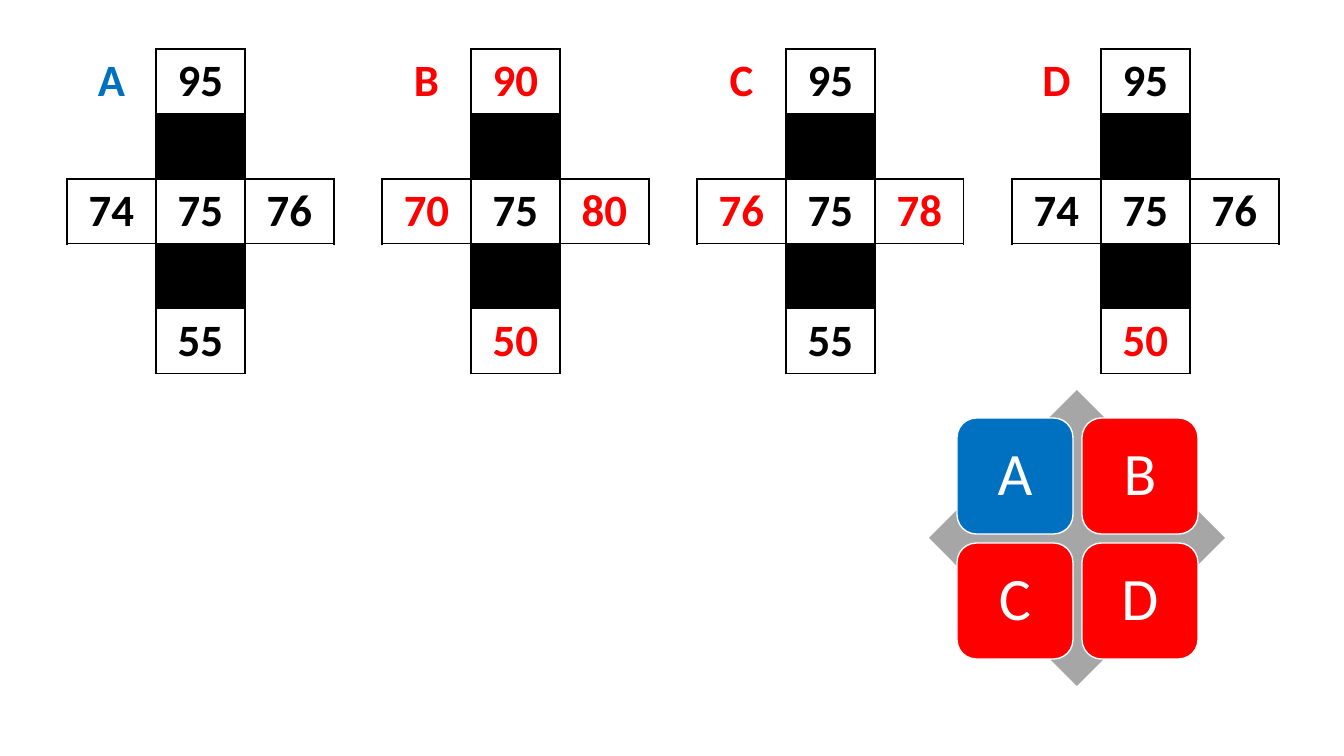
from pptx import Presentation, util as u
from pptx.dml.color import RGBColor
from pptx.enum import shapes, text
from pptx.oxml import parse_xml
from pptx.oxml.ns import nsdecls

BLACK = RGBColor(0x00, 0x00, 0x00)
WHITE = RGBColor(0xFF, 0xFF, 0xFF)
RED = RGBColor(0xFF, 0x00, 0x00)
BLUE = RGBColor(0x00, 0x70, 0xC0)
GRAY = RGBColor(0xA6, 0xA6, 0xA6)


def px(n):
    return u.Emu(round(n * 914400 / 100.8))


def write(tf, words, size, color, bold=False):
    p = tf.paragraphs[0]
    p.alignment = text.PP_ALIGN.CENTER
    r = p.add_run()
    r.text = words
    r.font.name = "Calibri"
    r.font.size = u.Pt(size)
    r.font.bold = bold
    r.font.color.rgb = color
    return p


prs = Presentation()
prs.slide_width, prs.slide_height = px(1344), px(756)
s = prs.slides.add_slide(prs.slide_layouts[6])
label_colors = {"A": BLUE, "B": RED, "C": RED, "D": RED}

# Answer matrix: diamond behind four tiles
group = s.shapes.add_group_shape()
diamond = group.shapes.add_shape(shapes.MSO_SHAPE.DIAMOND, px(929), px(390), px(296), px(296))
diamond.shadow.inherit = False
diamond.fill.solid()
diamond.fill.fore_color.rgb = GRAY
diamond.line.fill.background()

for i, (label, color) in enumerate(label_colors.items()):
    row, col = divmod(i, 2)
    sp = group.shapes.add_shape(shapes.MSO_SHAPE.ROUNDED_RECTANGLE,
                                px(957 + 125 * col), px(418 + 125 * row), px(116), px(116))
    sp.shadow.inherit = False
    sp.fill.solid()
    sp.fill.fore_color.rgb = color
    sp.line.color.rgb = WHITE
    sp.line.width = u.Pt(1)
    tf = sp.text_frame
    tf.margin_left = tf.margin_right = tf.margin_top = tf.margin_bottom = px(18)
    tf.vertical_anchor = text.MSO_ANCHOR.MIDDLE
    p = write(tf, label, 43, WHITE)
    p.line_spacing = 0.9

# Cross tables: top, left, centre, right, bottom
positions = [(0, 1), (2, 0), (2, 1), (2, 2), (4, 1)]
cross = set(positions) | {(1, 1), (3, 1)}
sides = {"L": (0, -1), "R": (0, 1), "T": (-1, 0), "B": (1, 0)}
values = {
    "A": [95, 74, 75, 76, 55],
    "B": [90, 70, 75, 80, 50],
    "C": [95, 76, 75, 78, 55],
    "D": [95, 74, 75, 76, 50],
}

for i, (label, numbers) in enumerate(values.items()):
    frame = s.shapes.add_table(5, 3, px(67 + 315 * i), px(49), px(267), px(325))
    table = frame.table
    table.first_row = table.horz_banding = False
    for column in table.columns:
        column.width = px(89)
    for table_row in table.rows:
        table_row.height = px(65)

    # Borders outline the cross only
    for row in range(5):
        for col in range(3):
            cell = table.cell(row, col)
            tcPr = cell._tc.get_or_add_tcPr()
            for side, (down, right) in sides.items():
                edged = (row, col) in cross or (row + down, col + right) in cross
                paint = ('<a:solidFill><a:srgbClr val="000000"/></a:solidFill>'
                         if edged else "<a:noFill/>")
                tcPr.append(parse_xml(
                    f'<a:ln{side} {nsdecls("a")} w="12700">{paint}</a:ln{side}>'))
            cell.vertical_anchor = text.MSO_ANCHOR.MIDDLE
            if (row, col) in cross and row % 2:
                cell.fill.solid()
                cell.fill.fore_color.rgb = BLACK
            else:
                cell.fill.background()

    # Numbers that differ from table A are red
    write(table.cell(0, 0).text_frame, label, 32, label_colors[label], True)
    for position, number, expected in zip(positions, numbers, values["A"]):
        color = BLACK if number == expected else RED
        write(table.cell(*position).text_frame, str(number), 32, color, True)

prs.save("out.pptx")
